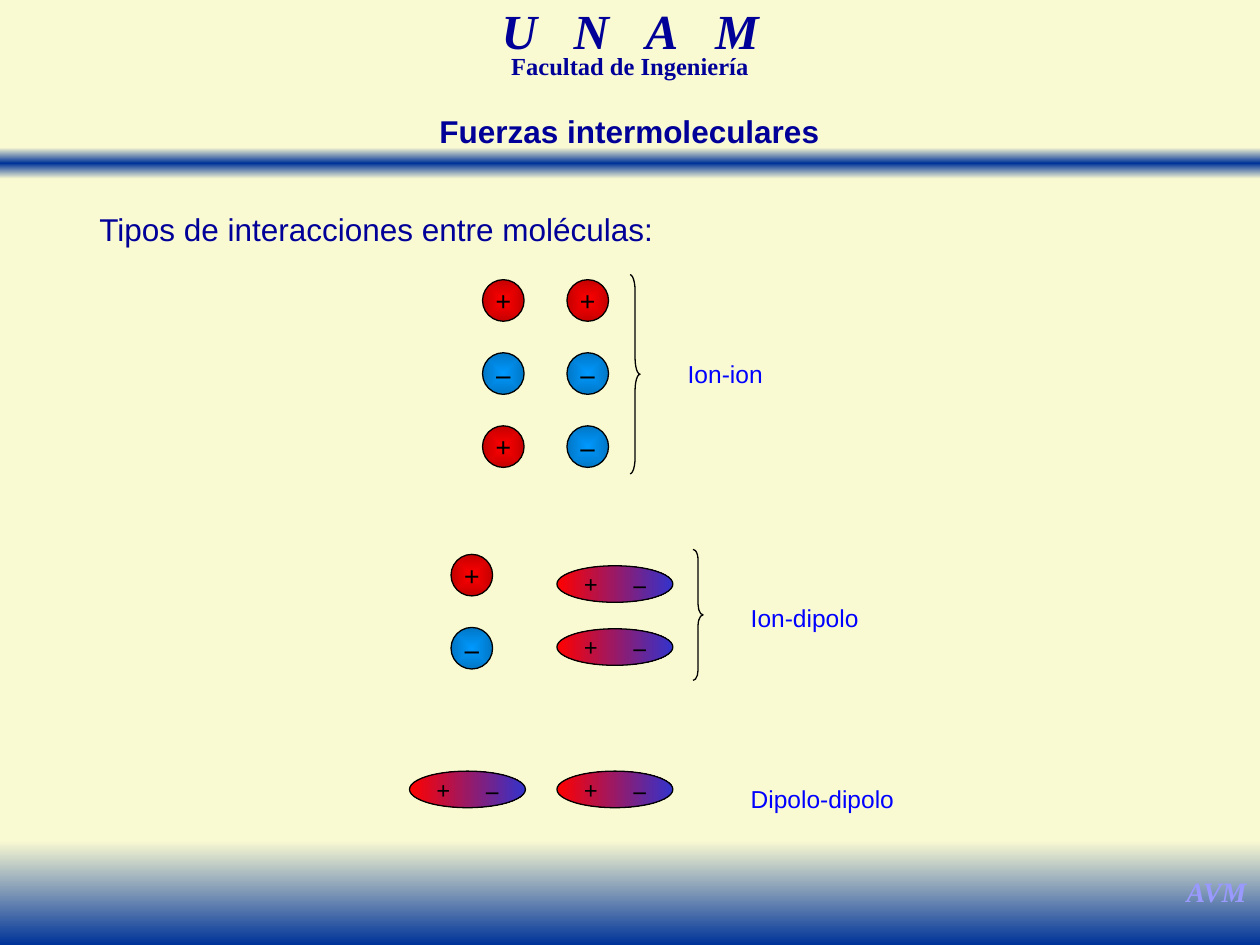
from pptx import Presentation
from pptx.dml.color import RGBColor
from pptx.enum.shapes import MSO_SHAPE
from pptx.enum.text import MSO_ANCHOR, PP_ALIGN
from pptx.oxml import parse_xml
from pptx.util import Inches, Pt

OVAL, RECT, BRACE = MSO_SHAPE.OVAL, MSO_SHAPE.RECTANGLE, MSO_SHAPE.LEFT_BRACE
TOP, MIDDLE = MSO_ANCHOR.TOP, MSO_ANCHOR.MIDDLE
LEFT, CENTER, JUSTIFY = PP_ALIGN.LEFT, PP_ALIGN.CENTER, PP_ALIGN.JUSTIFY
NS = "http://schemas.openxmlformats.org/drawingml/2006/main"

CREAM, NAVY, INK, BLUE, BLACK = "FAFAD2", "003399", "000099", "0000FF", "000000"
SERIF, SANS = "Times New Roman", "Arial"
TITLE = ("Fuerzas intermoleculares", (2.83, 0.84, 4.33, 0.4))

BANDS = [
    ((0, 1.17, 10, 0.25), (CREAM, NAVY, CREAM)),
    ((0, 6.67, 10, 0.83), (CREAM, NAVY)),
]
HEADS = [
    ("U N A M", (3.04, 0.08, 3.92, 0.43), CENTER, 0.7, 14,
     dict(size=28, name=SERIF, color=INK, bold=True, italic=True)),
    ("Facultad de Ingeniería", (3.21, 0.42, 3.58, 0.26), CENTER, 0.7, 0,
     dict(size=14, name=SERIF, color=INK, bold=True)),
    ("AVM", (9.31, 6.89, 0.69, 0.37), CENTER, 1, 0,
     dict(size=16, name=SERIF, color="9999FF", bold=True, italic=True)),
    ("Tipos de interacciones entre moléculas:", (0.69, 1.62, 5.41, 0.4),
     JUSTIFY, 1, 0, dict(size=18, name=SANS, color=INK)),
]
LABELS = [
    ("Ion-ion", (5.36, 2.8, 1.03, 0.34)),
    ("Ion-dipolo", (5.86, 4.74, 1.22, 0.34)),
    ("Dipolo-dipolo", (5.86, 6.17, 1.5, 0.34)),
]
IONS = {"+": ("FF0000", "C50000"), "–": ("0099FF", "0076C5")}
PAIRS = ["++", "––", "+–"]
PAIR_X, PAIR_Y, STEP_X, STEP_Y = 3.83, 2.22, 0.67, 0.58
ION_X, ION_Y = 3.58, 4.4
DIPOLES = [(4.42, 4.49), (4.42, 4.99), (4.42, 6.12), (3.25, 6.12)]
BRACES = [(5, 2.18, 0.08, 1.58), (5.5, 4.36, 0.08, 1.04)]

prs = Presentation()
prs.slide_width, prs.slide_height = Inches(10), Inches(7.5)
slide = prs.slides.add_slide(prs.slide_layouts[5])
shapes = slide.shapes


def tint(color, code):
    color.rgb = RGBColor.from_string(code)


def write(shape, text, form, align=CENTER, lead=1, gap=0, anchor=TOP, wrap=True):
    frame = shape.text_frame
    frame.word_wrap, frame.vertical_anchor = wrap, anchor
    para = frame.paragraphs[0]
    para.alignment, para.line_spacing = align, lead
    parts = text.replace(" ", "| |").split("|") if gap else [text]
    for part in parts:
        run = para.add_run()
        run.text = part
        if part == " ":
            run.font._element.set("spc", str(gap * 100))
        for key, val in form.items():
            if key == "color":
                tint(run.font.color, val)
            else:
                setattr(run.font, key, Pt(val) if key == "size" else val)


def draw(kind, box):
    shape = shapes.add_shape(kind, *map(Inches, box))
    shape.shadow.inherit = False
    return shape


def blend(shape, codes, way):
    last = len(codes) - 1
    stops = "".join(
        f'<a:gs pos="{100000 * i // last}"><a:srgbClr val="{code}"/></a:gs>'
        for i, code in enumerate(codes))
    shape._element.spPr.insert(2, parse_xml(
        f'<a:gradFill xmlns:a="{NS}" rotWithShape="1">'
        f'<a:gsLst>{stops}</a:gsLst>{way}</a:gradFill>'))


def edge(shape):
    tint_line = shape.line
    tint_line.fill.solid()
    tint(tint_line.color, BLACK)
    tint_line.width = Pt(0.75)


def linear(deg):
    return f'<a:lin ang="{deg * 60000}" scaled="1"/>'


RADIAL = ('<a:path path="shape"><a:fillToRect l="50000" t="50000" '
          'r="50000" b="50000"/></a:path>')


def oval(box, codes, way, text, size, gap=0):
    shape = draw(OVAL, box)
    blend(shape, codes, way)
    edge(shape)
    form = dict(size=size, name=SERIF, color=BLACK, bold=True)
    write(shape, text, form, gap=gap, anchor=MIDDLE, wrap=False)


def ion(sign, x, y):
    oval((x, y, 0.33, 0.33), IONS[sign], RADIAL, sign, 16)


def label(text, box, form, align=LEFT, lead=1, gap=0):
    write(shapes.add_textbox(*map(Inches, box)), text, form, align, lead, gap)


tint_bg = slide.background.fill
tint_bg.solid()
tint(tint_bg.fore_color, CREAM)

for box, codes in BANDS:
    band = draw(RECT, box)
    blend(band, codes, linear(90))
    band.line.fill.background()

text, box = TITLE
title = shapes.title
title.left, title.top, title.width, title.height = map(Inches, box)
write(title, text, dict(size=18, name=SANS, color=INK, bold=True))

for text, box, align, lead, gap, form in HEADS:
    label(text, box, form, align, lead, gap)
for text, box in LABELS:
    label(text, box, dict(size=14, name=SANS, color=BLUE))

for row, pair in enumerate(PAIRS):
    for col, sign in enumerate(pair):
        ion(sign, PAIR_X + col * STEP_X, PAIR_Y + row * STEP_Y)
for row, sign in enumerate(IONS):
    ion(sign, ION_X, ION_Y + row * STEP_Y)
for x, y in DIPOLES:
    oval((x, y, 0.92, 0.29), ("FF0000", "3333CC"), linear(0), "+ –", 14, 17)

for box in BRACES:
    brace = draw(BRACE, box)
    brace.rotation = 180
    brace.adjustments[0] = box[3]
    brace.fill.background()
    edge(brace)

prs.save("out.pptx")
